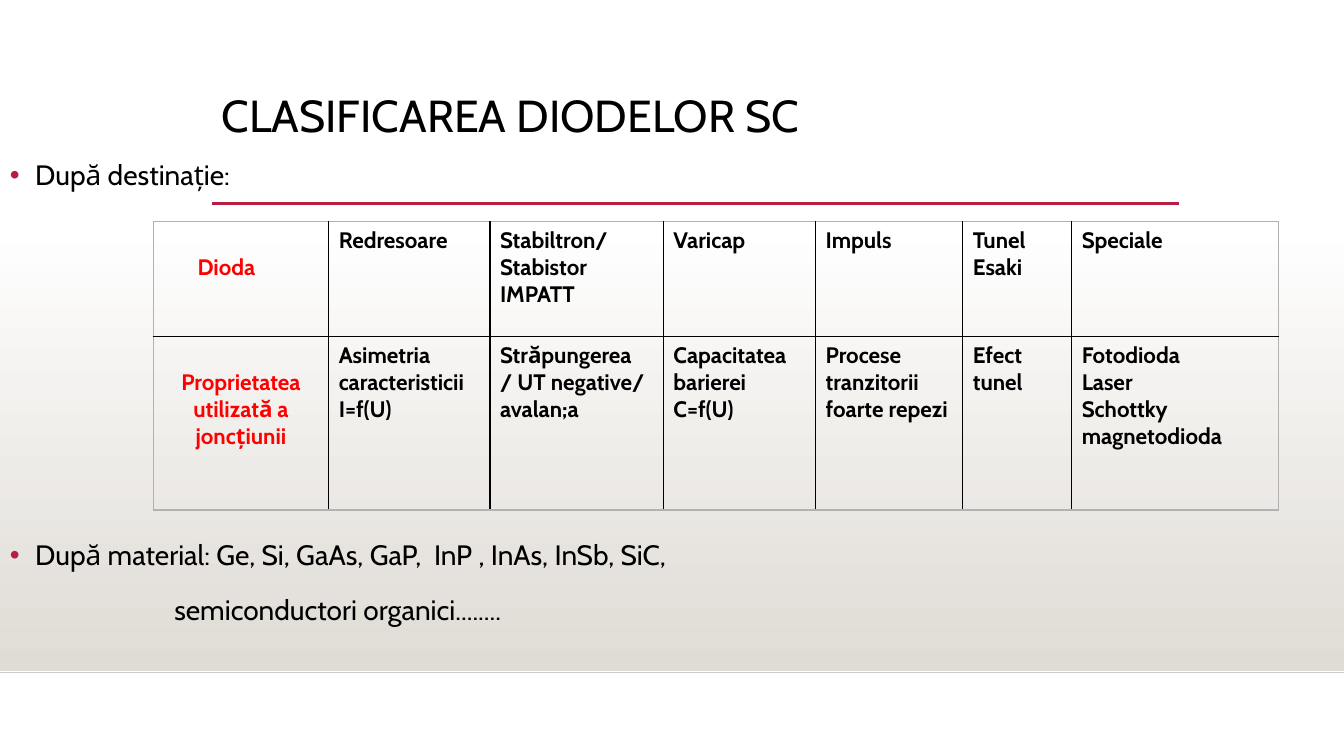
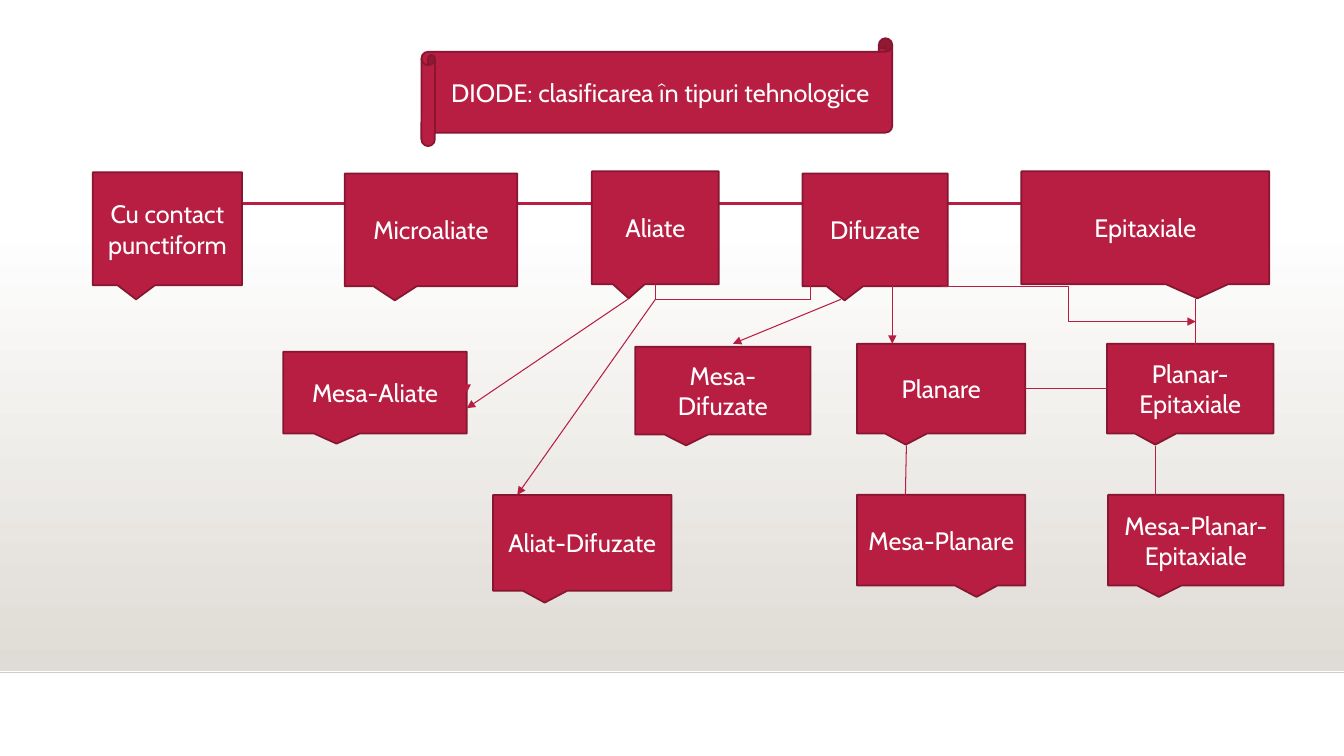
from lxml import etree
from pptx import Presentation
from pptx.dml.color import RGBColor
from pptx.enum import shapes, text
from pptx.oxml import ns
from pptx.util import Inches, Pt

FONT = "Cabin"
CRIMSON, DARK, RED = "B71E42", "871631", "FF0000"
BLACK, WHITE, SAND, GREY, OUTER = "000000", "FFFFFF", "DFDBD5", "CCCCCC", "B2B2B2"
SLIDE_W, SLIDE_H = 13.33, 7.5
BAND_TOP, BAND_BOTTOM = 2.2, 6.66

TITLE = "CLASIFICAREA DIODELOR SC"
DESTINATION = ["După destinație:"]
MATERIAL = ["După material: Ge, Si, GaAs, GaP,  InP , InAs, InSb, SiC,",
            "semiconductori organici........"]
COLUMN_WIDTHS = [1.74, 1.6, 1.72, 1.51, 1.46, 1.08, 2.05]
ROW_HEIGHTS = [1.14, 1.72]
ROWS = [
    ["Dioda", "Redresoare", "Stabiltron/\nStabistor\nIMPATT", "Varicap",
     "Impuls", "Tunel\nEsaki", "Speciale"],
    ["Proprietatea utilizată a\njoncțiunii", "Asimetria caracteristicii I=f(U)",
     "Străpungerea\n/ UT negative/\navalan;a", "Capacitatea barierei\nC=f(U)",
     "Procese tranzitorii foarte repezi", "Efect tunel",
     "Fotodioda\nLaser\nSchottky\nmagnetodioda"],
]

HEADING = ("DIODE: clasificarea în tipuri tehnologice", 4.18, 0.38, 4.67, 1.07)
TIP_RIGHT = {"Epitaxiale", "Mesa-Planare"}
CALLOUTS = [
    ("Cu contact punctiform", 0.92, 1.71, 1.48, 1.12),
    ("Microaliate", 3.42, 1.72, 1.71, 1.12),
    ("Aliate", 5.87, 1.7, 1.26, 1.12),
    ("Difuzate", 7.96, 1.72, 1.44, 1.12),
    ("Epitaxiale", 10.13, 1.7, 2.46, 1.12),
    ("Mesa-Aliate", 2.81, 3.49, 1.82, 0.81),
    ("Mesa-Difuzate", 6.3, 3.44, 1.74, 0.87),
    ("Planare", 8.5, 3.41, 1.67, 0.89),
    ("Planar-Epitaxiale", 10.98, 3.41, 1.65, 0.89),
    ("Aliat-Difuzate", 4.89, 4.91, 1.77, 0.95),
    ("Mesa-Planare", 8.5, 4.91, 1.67, 0.9),
    ("Mesa-Planar-Epitaxiale", 10.99, 4.91, 1.74, 0.9),
]
ARROWS = [
    ((6.24, 2.96), (4.63, 4.05)),
    ((8.34, 2.97), (7.27, 3.41)),
    ((8.85, 2.84), (8.85, 3.41)),
    ((6.5, 2.97), (5.13, 4.91)),
    ((4.63, 3.88), ("Mesa-Aliate", 3)),
]
LINKS = [
    (("Aliate", 2), (6.5, 2.97)),
    ((6.5, 2.97), (8.04, 2.97)),
    ((8.04, 2.97), (8.04, 2.82)),
    ((11.86, 2.97), (11.86, 3.44)),
    ((11.46, 4.42), (11.46, 4.91)),
    ((8.99, 4.42), (8.98, 4.91)),
    (("Planare", 3), ("Planar-Epitaxiale", 1)),
]
ELBOW = ((9.34, 2.84), (11.86, 3.19))


def rgb(value):
    return RGBColor.from_string(value)


def child(parent, tag, **attributes):
    return etree.SubElement(parent, ns.qn(tag), attributes)


def write(frame, content, size, color, bold=False, align=None):
    frame.word_wrap = True
    frame.text = content
    for para in frame.paragraphs:
        para.alignment = align
        for span in para.runs:
            font = span.font
            font.name, font.size, font.bold = FONT, Pt(size), bold
            font.color.rgb = rgb(color)


def add_text(page, content, size, left, top, width, height):
    frame = page.shapes.add_textbox(*map(Inches, (left, top, width, height))).text_frame
    write(frame, content, size, BLACK)
    return frame


def add_line(page, start, end, color=CRIMSON, width=0.75, arrow=False, elbow=False, boxes=None):
    kind = shapes.MSO_CONNECTOR.ELBOW if elbow else shapes.MSO_CONNECTOR.STRAIGHT
    named = [isinstance(point[0], str) for point in (start, end)]
    places = [(0, 0) if joined else point for joined, point in zip(named, (start, end))]
    line = page.shapes.add_connector(kind, *(Inches(n) for place in places for n in place))
    for joined, point, connect in zip(named, (start, end), (line.begin_connect, line.end_connect)):
        if joined:
            connect(boxes[point[0]], point[1])
    line.line.color.rgb = rgb(color)
    line.line.width = Pt(width)
    if arrow:
        child(line.line._get_or_add_ln(), "a:tailEnd", type="triangle")
    child(line._element.spPr, "a:effectLst")


def add_page(deck):
    page = deck.slides.add_slide(deck.slide_layouts[6])
    band = page.shapes.add_shape(shapes.MSO_SHAPE.RECTANGLE, 0, Inches(BAND_TOP),
                                 Inches(SLIDE_W), Inches(BAND_BOTTOM - BAND_TOP))
    band.shadow.inherit = False
    band.line.fill.background()
    band.fill.gradient()
    band.fill.gradient_angle = 270
    for stop, color in zip(band.fill.gradient_stops, (WHITE, SAND)):
        stop.color.rgb = rgb(color)
    add_line(page, (0, 6.67), (SLIDE_W, 6.67), GREY, 1)
    add_line(page, (2.1, 2.02), (11.69, 2.02), CRIMSON, 2.5)
    return page


def add_bullets(page, lines, top):
    frame = add_text(page, "\n".join(lines), 20, 0, top, 9.58, 0.54 * len(lines))
    for index, para in enumerate(frame.paragraphs):
        para.line_spacing = 1.2
        para.space_before = Pt(10 if index else 0)
        props = para._p.get_or_add_pPr()
        if index:
            props.set("marL", str(Inches(1.63)))
            continue
        props.set("marL", str(Inches(0.25)))
        props.set("indent", str(-Inches(0.25)))
        child(child(props, "a:buClr"), "a:srgbClr", val=CRIMSON)
        child(props, "a:buFont", typeface="Arial")
        child(props, "a:buChar", char="•")


def add_borders(cell, colors):
    props = cell._tc.get_or_add_tcPr()
    for side, color in zip("LRTB", colors):
        border = child(props, f"a:ln{side}", w=str(Pt(1)))
        child(child(border, "a:solidFill"), "a:srgbClr", val=color)


def add_diode_table(page):
    last_row, last_column = len(ROWS) - 1, len(COLUMN_WIDTHS) - 1
    table = page.shapes.add_table(
        len(ROWS), len(COLUMN_WIDTHS), Inches(1.52), Inches(2.2),
        Inches(sum(COLUMN_WIDTHS)), Inches(sum(ROW_HEIGHTS))).table
    table.first_row = table.horz_banding = False
    for column, width in zip(table.columns, COLUMN_WIDTHS):
        column.width = Inches(width)
    for r, (row, height) in enumerate(zip(ROWS, ROW_HEIGHTS)):
        table.rows[r].height = Inches(height)
        for c, content in enumerate(row):
            cell = table.cell(r, c)
            edges = (c == 0, c == last_column, r == 0, r == last_row)
            add_borders(cell, [OUTER if edge else BLACK for edge in edges])
            cell.fill.background()
            centred = text.PP_ALIGN.CENTER if c == 0 and r else None
            write(cell.text_frame, content, 16, BLACK if c else RED, True, centred)
            if c == 0:
                cell.margin_top = Inches(0.32)
    table.cell(0, 0).margin_left = Inches(0.44)


def add_box(page, kind, content, left, top, width, height):
    box = page.shapes.add_shape(kind, *map(Inches, (left, top, width, height)))
    box.shadow.inherit = False
    box.fill.solid()
    box.fill.fore_color.rgb = rgb(CRIMSON)
    box.line.color.rgb = rgb(DARK)
    box.line.width = Pt(1.25)
    box.text_frame.vertical_anchor = text.MSO_ANCHOR.MIDDLE
    write(box.text_frame, content, 18, WHITE, align=text.PP_ALIGN.CENTER)
    return box


def build_purposes(deck):
    page = add_page(deck)
    title = add_text(page, TITLE, 32, 2.1, 0.88, 9.58, 1.15)
    title.paragraphs[0].line_spacing = 0.9
    add_bullets(page, DESTINATION, 1.45)
    add_bullets(page, MATERIAL, 5.22)
    add_diode_table(page)


def build_technologies(deck):
    page = add_page(deck)
    boxes = {}
    for name, *place in CALLOUTS:
        box = add_box(page, shapes.MSO_SHAPE.RECTANGULAR_CALLOUT, name, *place)
        box.adjustments[0] = 0.21 if name in TIP_RIGHT else -0.21
        boxes[name] = box
    add_box(page, shapes.MSO_SHAPE.HORIZONTAL_SCROLL, *HEADING)
    for start, end in ARROWS:
        add_line(page, start, end, arrow=True, boxes=boxes)
    for start, end in LINKS:
        add_line(page, start, end, boxes=boxes)
    add_line(page, *ELBOW, arrow=True, elbow=True)


def main():
    """Build the two slides on diode classification."""
    deck = Presentation()
    deck.slide_width, deck.slide_height = Inches(SLIDE_W), Inches(SLIDE_H)
    build_purposes(deck)
    build_technologies(deck)
    deck.save("out.pptx")


if __name__ == "__main__":
    main()
